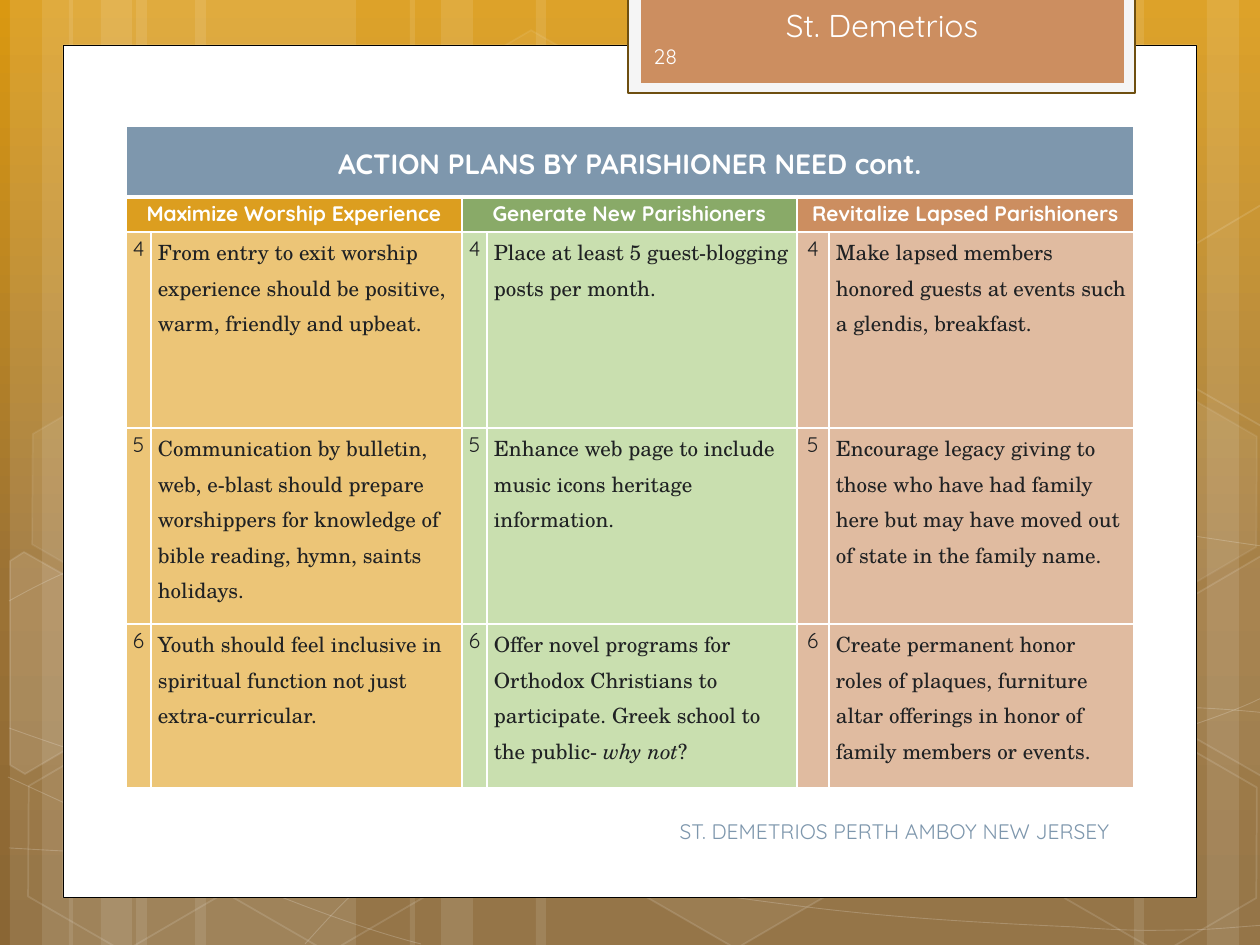
from copy import deepcopy

from lxml import etree
from pptx import Presentation
from pptx.dml.color import RGBColor
from pptx.enum.shapes import MSO_SHAPE
from pptx.enum.text import MSO_ANCHOR, PP_ALIGN
from pptx.oxml.ns import qn
from pptx.util import Emu, Pt

RECT, HEXAGON = MSO_SHAPE.RECTANGLE, MSO_SHAPE.HEXAGON
LEFT, CENTER, RIGHT = PP_ALIGN.LEFT, PP_ALIGN.CENTER, PP_ALIGN.RIGHT
TOP, MIDDLE = MSO_ANCHOR.TOP, MSO_ANCHOR.MIDDLE
SCALE = 914400 / 126
WIDE, HIGH = 1260, 945
SANS, SERIF = "Quicksand", "TeX Gyre Schola"
WHITE, INK, SLATE, CLAY = "FFFFFF", "1F2123", "7E97AD", "CC8E60"

BACK = [(0, "DA9811"), (0.62, "9B7235"), (1, "8A6634")]
BARS = [(136, 220), (10, 63), (42, 105), (195, 220), (69, 63), (101, 105),
        (924, 220), (1207, 63), (1134, 105), (536, 388), (410, 63), (441, 105)]
# Each curve: a start point, then Bezier segments (two controls and an end).
CURVES = [
    [(9, 848), (77, 852, 145, 856, 239, 854), (334, 853, 451, 851, 577, 838),
     (703, 825, 882, 801, 998, 777), (1113, 753, 1231, 716, 1269, 694)],
    [(9, 601), (45, 581, 82, 562, 152, 543), (224, 524, 326, 499, 437, 488),
     (549, 478, 685, 478, 824, 488), (963, 498, 1193, 537, 1269, 547)],
    [(8, 777), (160, 847, 311, 916, 421, 944)],
    [(9, 728), (48, 742, 88, 756, 161, 776), (234, 795, 344, 827, 450, 848),
     (554, 869, 687, 892, 791, 905), (896, 919, 1008, 924, 1075, 927),
     (1140, 932, 1158, 930, 1191, 930), (1223, 929, 1246, 926, 1269, 925)],
    [(305, 944), (328, 919, 350, 893, 381, 871), (411, 848, 454, 823, 489, 805),
     (524, 788, 546, 780, 592, 767), (638, 754, 722, 737, 766, 728),
     (811, 719, 818, 719, 857, 717), (896, 713, 958, 709, 1000, 708),
     (1044, 707, 1116, 708, 1116, 708), (1116, 708, 1201, 708, 1201, 708),
     (1223, 709, 1245, 711, 1256, 712), (1264, 713, 1260, 712, 1268, 713)],
]
# left, top, fill opacity, line opacity (percent)
HEXES = [(421, 45, 4, 8), (626, 742, 6, 12), (14, 745, 0, 12), (18, 393, 7, 8),
         (219, 746, 0, 12), (949, 571, 10, 12), (1051, 747, 0, 12), (1051, 396, 7, 8)]
# Hexagons cut off by the slide edge: fill opacity, corners
CUTS = [
    (10, [(10, 561), (24, 552), (121, 607), (120, 718), (25, 774), (10, 765)]),
    (4, [(1167, 611), (1261, 556), (1271, 562), (1271, 772), (1263, 777), (1167, 722)]),
    (0, [(1167, 261), (1261, 205), (1273, 212), (1271, 422), (1263, 427), (1167, 372)]),
]
# box, fill, line colour, line width
PANELS = [((63, 45, 1134, 853), WHITE, "000000", 0.5),
          ((628, -2, 507, 95), "F5F5F5", "6E4F10", 1.25),
          ((641, -2, 483, 85), CLAY, None, 0)]
LABELS = [("St. Demetrios", (756, 0, 252, 89), 18, WHITE, CENTER, TOP),
          ("ST. DEMETRIOS PERTH AMBOY NEW JERSEY", (639, 806, 483, 50), 12, SLATE, RIGHT, MIDDLE),
          ("28", (641, 31, 184, 50), 12, "FEFEFE", LEFT, MIDDLE)]

TITLE = "ACTION PLANS BY PARISHIONER NEED cont."
COLS = [25, 311, 25, 310, 32, 305]
ROWS = [71, 35, 196, 196, 164]
FIRST = 4
# heading, head fill, body fill, plans (each a list of runs; "*" marks italic)
NEEDS = [
    ("Maximize Worship Experience", "DC9E1F", "ECC577", [
        ["From entry to exit worship experience should be positive, warm, friendly and upbeat."],
        ["Communication by bulletin, web, e-blast should prepare worshippers for knowledge of "
         "bible reading, hymn, saints holidays."],
        ["Youth should feel inclusive in spiritual function not just extra-curricular."]]),
    ("Generate New Parishioners", "89AA68", "C9DFAF", [
        ["Place at least 5 guest-blogging posts per month."],
        ["Enhance web page to include music icons heritage information."],
        ["Offer novel programs for Orthodox Christians to participate. Greek school to the public- ",
         "*why not", "?"]]),
    ("Revitalize Lapsed Parishioners", CLAY, "E0BBA0", [
        ["Make lapsed members honored guests at events such a glendis, breakfast."],
        ["Encourage legacy giving to those who have had family here but may have moved out of "
         "state in the family name."],
        ["Create permanent honor roles of plaques, furniture altar offerings in honor of family "
         "members or events."]]),
]


def px(n):
    return Emu(round(n * SCALE))


def rgb(code):
    return RGBColor.from_string(code)


def fade(fill, pct):
    """Set the opacity of a solid fill."""
    color = fill._xPr.find(qn("a:solidFill"))[0]
    etree.SubElement(color, qn("a:alpha")).set("val", str(pct * 1000))


def paint(shape, fill, opaque=100, line=None, width=0, clear=100):
    shape.shadow.inherit = False
    if fill and opaque:
        shape.fill.solid()
        shape.fill.fore_color.rgb = rgb(fill)
        if opaque < 100:
            fade(shape.fill, opaque)
    else:
        shape.fill.background()
    if line:
        shape.line.width = Pt(width)
        shape.line.color.rgb = rgb(line)
        if clear < 100:
            fade(shape.line.fill, clear)
    else:
        shape.line.fill.background()


def add(kind, box):
    return slide.shapes.add_shape(kind, *map(px, box))


def outline(points, close):
    build = slide.shapes.build_freeform(*points[0], scale=SCALE)
    build.add_line_segments(points[1:], close=close)
    return build.convert_to_shape()


def bend(curve):
    """Draw the control points as an outline, then join each three into a Bezier."""
    points = curve[:1] + [seg[i:i + 2] for seg in curve[1:] for i in (0, 2, 4)]
    shape = outline(points, False)
    lines = list(shape._element.iter(qn("a:lnTo")))
    for n in range(0, len(lines), 3):
        cubic = etree.Element(qn("a:cubicBezTo"))
        lines[n].addprevious(cubic)
        for line in lines[n:n + 3]:
            cubic.append(line[0])
            line.getparent().remove(line)
    return shape


def write(frame, runs, size, font, color, align, bold=False):
    para = frame.paragraphs[0]
    para.alignment = align
    for text in runs:
        run = para.add_run()
        run.text = text.lstrip("*")
        face = run.font
        face.size, face.name, face.bold = Pt(size), font, bold
        face.italic = text.startswith("*")
        face.color.rgb = rgb(color)
    return para


def edge(cell, top=1, bottom=1):
    props = cell._tc.get_or_add_tcPr()
    for side, width in (("L", 1), ("R", 1), ("T", top), ("B", bottom)):
        line = etree.SubElement(props, qn("a:ln" + side), w=str(Pt(width)))
        solid = etree.SubElement(line, qn("a:solidFill"))
        etree.SubElement(solid, qn("a:srgbClr"), val=WHITE)


def fill_cell(cell, runs, fill, size=12, font=SANS, color=INK, align=CENTER, bold=False, anchor=TOP):
    cell.fill.solid()
    cell.fill.fore_color.rgb = rgb(fill)
    cell.margin_left = cell.margin_right = px(7)
    cell.margin_top = cell.margin_bottom = 0
    cell.vertical_anchor = anchor
    write(cell.text_frame, runs, size, font, color, align, bold).line_spacing = 1.15


deck = Presentation()
deck.slide_width, deck.slide_height = px(WIDE), px(HIGH)
slide = deck.slides.add_slide(deck.slide_layouts[6])

back = slide.background.fill
back.gradient()
back.gradient_angle = 270
stops = back.gradient_stops[0]._gs.getparent()
stops.append(deepcopy(stops[-1]))
for stop, (at, code) in zip(back.gradient_stops, BACK):
    stop.position = at
    stop.color.rgb = rgb(code)

for x, w in BARS:
    paint(add(RECT, (x, 0, w, HIGH)), WHITE, 10)
for curve in CURVES:
    paint(bend(curve), None, line=WHITE, width=0.5, clear=20)
for x, y, opaque, clear in HEXES:
    hexagon = add(HEXAGON, (x, y, 220, 192))
    hexagon.rotation = 30
    hexagon.adjustments[0] = 0.285
    paint(hexagon, WHITE, opaque, WHITE, 1, clear)
for opaque, points in CUTS:
    paint(outline(points, True), WHITE, opaque, WHITE, 1, 12)
for box, fill, line, width in PANELS:
    paint(add(RECT, box), fill, line=line, width=width)

for text, box, size, color, align, anchor in LABELS:
    frame = slide.shapes.add_textbox(*map(px, box)).text_frame
    frame.word_wrap = True
    frame.vertical_anchor = anchor
    write(frame, [text], size, SANS, color, align)

grid = slide.shapes.add_table(len(ROWS), len(COLS), px(126), px(126), px(sum(COLS)), px(sum(ROWS))).table
grid.first_row = grid.horz_banding = False
for col, w in zip(grid.columns, COLS):
    col.width = px(w)
for r, h in enumerate(ROWS):
    grid.rows[r].height = px(h)
    for c in range(len(COLS)):
        edge(grid.cell(r, c), top=3 if r == 1 else 1, bottom=3 if r == 0 else 1)

grid.cell(0, 0).merge(grid.cell(0, len(COLS) - 1))
fill_cell(grid.cell(0, 0), [TITLE], SLATE, 16, color=WHITE, bold=True, anchor=MIDDLE)
for n, (head, dark, light, plans) in enumerate(NEEDS):
    c = 2 * n
    grid.cell(1, c).merge(grid.cell(1, c + 1))
    fill_cell(grid.cell(1, c), [head], dark, color=WHITE, bold=True)
    for i, runs in enumerate(plans):
        fill_cell(grid.cell(i + 2, c), [str(FIRST + i)], light)
        fill_cell(grid.cell(i + 2, c + 1), runs, light, font=SERIF, align=LEFT)

deck.save("out.pptx")
